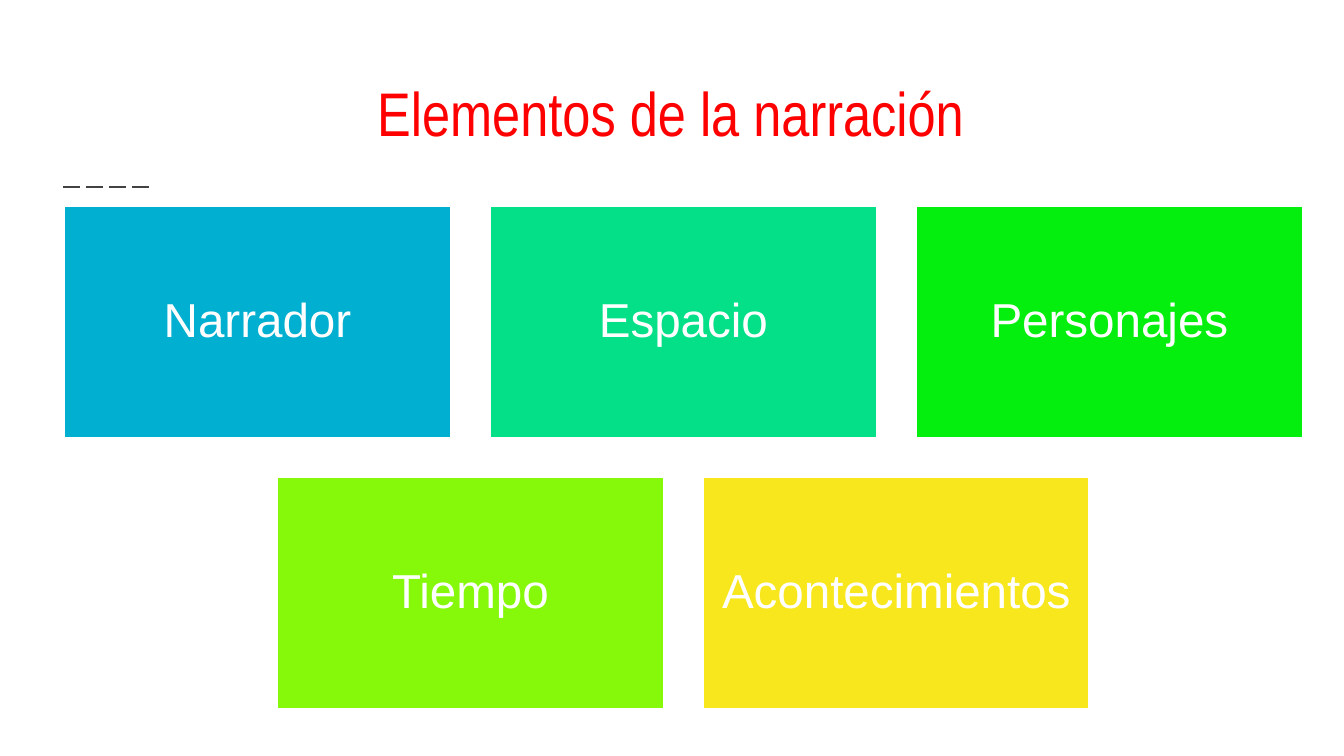
import pptx
import pptx.util
import pptx.dml.color
import pptx.enum.dml
import pptx.enum.shapes
import pptx.enum.text
import pptx.oxml.ns
import lxml.etree

PX = 914400 / 100.8


def px(num):
    return pptx.util.Emu(round(num * PX))


def tint(code):
    return pptx.dml.color.RGBColor.from_string(code)


class Deck:
    """Holds the style and the current slide."""

    def __init__(self, wide, high):
        self.prs = pptx.Presentation()
        self.prs.slide_width = px(wide)
        self.prs.slide_height = px(high)
        self.slide = self.prs.slides.add_slide(self.prs.slide_layouts[6])
        self.white = "FFFFFF"

    def label(self, shape, words, font, size, color, inset, anchor, lead):
        frame = shape.text_frame
        frame.word_wrap = True
        frame.vertical_anchor = anchor
        frame.margin_left = frame.margin_right = px(inset)
        frame.margin_top = frame.margin_bottom = px(inset)
        para = frame.paragraphs[0]
        para.alignment = pptx.enum.text.PP_ALIGN.CENTER
        para.line_spacing = lead
        run = para.add_run()
        run.text = words
        run.font.name = font
        run.font.size = pptx.util.Pt(size)
        run.font.color.rgb = tint(color)

    def title(self, words, left, top, wide, high):
        box = self.slide.shapes.add_textbox(px(left), px(top), px(wide), px(high))
        self.label(box, words, "Arial Narrow", 44, "FF0000", 13,
                   pptx.enum.text.MSO_ANCHOR.BOTTOM, 1.0)

    def dash(self, left, right, top):
        line = self.slide.shapes.add_connector(
            pptx.enum.shapes.MSO_CONNECTOR.STRAIGHT,
            px(left), px(top), px(right), px(top))
        line.line.color.rgb = tint("424242")
        line.line.width = pptx.util.Pt(1.5)
        line.line.dash_style = pptx.enum.dml.MSO_LINE.LONG_DASH
        props = line._element.spPr
        lxml.etree.SubElement(props, pptx.oxml.ns.qn("a:effectLst"))

    def card(self, words, fill, left, top, wide, high):
        card = self.slide.shapes.add_shape(
            pptx.enum.shapes.MSO_SHAPE.RECTANGLE,
            px(left), px(top), px(wide), px(high))
        card.shadow.inherit = False
        card.fill.solid()
        card.fill.fore_color.rgb = tint(fill)
        card.line.color.rgb = tint(self.white)
        card.line.width = pptx.util.Pt(2)
        self.label(card, words, "Arial", 34, self.white, 14,
                   pptx.enum.text.MSO_ANCHOR.MIDDLE, 0.9)


def main():
    deck = Deck(1344, 756)
    deck.dash(63, 153, 187)
    deck.title("Elementos de la narración", 45, 54, 1252, 108)

    rows = [
        [("Narrador", "01AFD1"), ("Espacio", "03E088"), ("Personajes", "04EF0E")],
        [("Tiempo", "86F90A"), ("Acontecimientos", "F8E71C")],
    ]
    left, top, wide, high = 64, 206, 387, 232
    step, drop = 426, 271
    for row, cards in enumerate(rows):
        start = left + (len(rows[0]) - len(cards)) * step // 2
        for col, (words, fill) in enumerate(cards):
            deck.card(words, fill, start + col * step, top + row * drop, wide, high)

    deck.prs.save("out.pptx")


if __name__ == "__main__":
    main()
